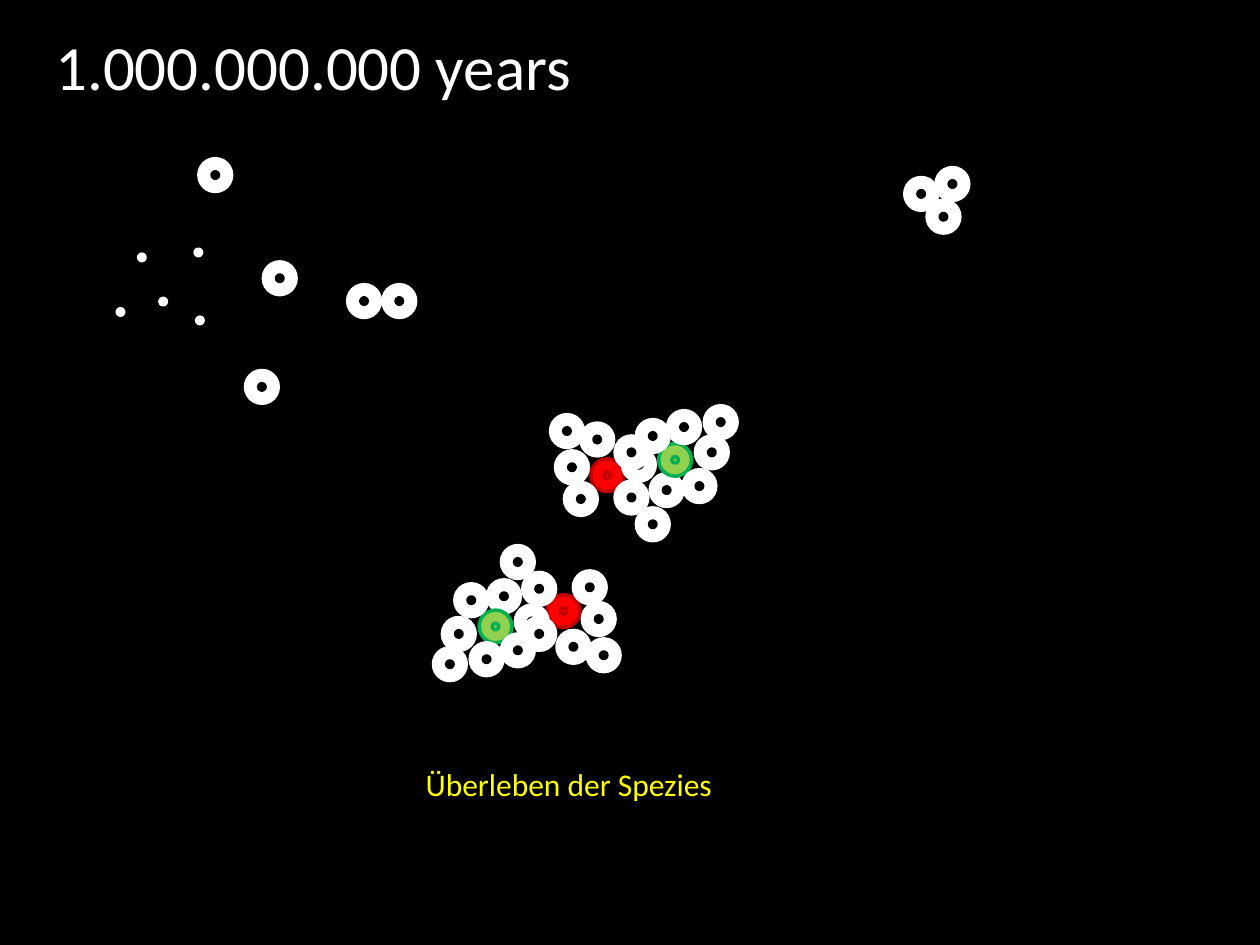
from pptx import Presentation
from pptx.dml.color import RGBColor
from pptx.enum.shapes import MSO_SHAPE
from pptx.enum.text import MSO_ANCHOR, MSO_AUTO_SIZE, PP_ALIGN
from pptx.util import Cm, Pt

BLACK = RGBColor(0x00, 0x00, 0x00)
WHITE = RGBColor(0xFF, 0xFF, 0xFF)
RED = RGBColor(0xFF, 0x00, 0x00)
DARK_RED = RGBColor(0xC0, 0x00, 0x00)
LIME = RGBColor(0x92, 0xD0, 0x50)
GREEN = RGBColor(0x00, 0xB0, 0x50)
YELLOW = RGBColor(0xFF, 0xFF, 0x00)

CELL_SIZE = 0.66
NUCLEUS_SIZE = 0.13

PLAIN = ((WHITE, WHITE), (BLACK, BLACK))
RED_CELL = ((RED, DARK_RED), (RED, DARK_RED))
GREEN_CELL = ((LIME, GREEN), (LIME, GREEN))

MOLECULES = [(3.29, 6.08), (4.0, 5.09), (2.43, 6.29), (2.86, 5.19), (4.03, 6.46)]
SINGLE_CELLS = [(5.64, 5.61), (7.34, 6.07), (4.34, 3.53), (5.28, 7.8), (8.05, 6.07)]
CELL_TRIO = [(18.57, 3.91), (19.02, 4.37), (19.2, 3.71)]
ORGANISM = [
    (12.24, 9.58, RED_CELL),
    (12.73, 10.03, PLAIN),
    (12.88, 9.37, PLAIN),
    (13.44, 9.88, PLAIN),
    (13.16, 10.57, PLAIN),
    (13.61, 9.27, GREEN_CELL),
    (13.16, 8.79, PLAIN),
    (13.79, 8.61, PLAIN),
    (14.35, 9.12, PLAIN),
    (14.1, 9.8, PLAIN),
    (14.53, 8.51, PLAIN),
    (11.71, 10.06, PLAIN),
    (11.53, 9.42, PLAIN),
    (12.04, 8.86, PLAIN),
    (12.73, 9.12, PLAIN),
    (11.43, 8.69, PLAIN),
]
MIRROR_X, MIRROR_Y = 11.8, 10.95


def paint(shape, fill, line):
    shape.fill.solid()
    shape.fill.fore_color.rgb = fill
    shape.line.color.rgb = line
    shape.line.width = Pt(2)


def add_disc(shapes, x, y, size, fill, line):
    disc = shapes.add_shape(
        MSO_SHAPE.OVAL, Cm(x - size / 2), Cm(y - size / 2), Cm(size), Cm(size)
    )
    disc.shadow.inherit = False
    paint(disc, fill, line)


def add_cell(shapes, x, y, colours=PLAIN):
    body, nucleus = colours
    add_disc(shapes, x, y, CELL_SIZE, *body)
    add_disc(shapes, x, y, NUCLEUS_SIZE, *nucleus)


def add_cell_group(page, cells):
    group = page.shapes.add_group_shape()
    for cell in cells:
        add_cell(group.shapes, *cell)


def write_text(box, text, size, colour, anchor=MSO_ANCHOR.TOP, font="Calibri"):
    frame = box.text_frame
    frame.vertical_anchor = anchor
    para = frame.paragraphs[0]
    para.alignment = PP_ALIGN.LEFT
    span = para.add_run()
    span.text = text
    span.font.name = font
    span.font.size = Pt(size)
    span.font.color.rgb = colour


def add_title(page, text):
    title = page.shapes.title
    title.left, title.top, title.width, title.height = Cm(0.86), Cm(0.76), Cm(11.71), Cm(1.12)
    paint(title, BLACK, BLACK)
    title.text_frame.auto_size = MSO_AUTO_SIZE.NONE
    write_text(title, text, size=36, colour=WHITE, anchor=MSO_ANCHOR.MIDDLE)


def add_caption(page, text):
    caption = page.shapes.add_textbox(Cm(8.33), Cm(15.29), Cm(6.35), Cm(1.02))
    caption.text_frame.word_wrap = False
    caption.text_frame.auto_size = MSO_AUTO_SIZE.SHAPE_TO_FIT_TEXT
    write_text(caption, text, size=18, colour=YELLOW)


def main():
    deck = Presentation()
    deck.slide_width, deck.slide_height = Cm(25.4), Cm(19.05)
    page = deck.slides.add_slide(deck.slide_layouts[5])
    page.background.fill.solid()
    page.background.fill.fore_color.rgb = BLACK

    soup = page.shapes.add_group_shape()
    for x, y in MOLECULES:
        add_disc(soup.shapes, x, y, NUCLEUS_SIZE, WHITE, WHITE)
    for x, y in SINGLE_CELLS:
        add_cell(soup.shapes, x, y)

    add_cell_group(page, CELL_TRIO)
    add_cell_group(page, ORGANISM)
    offspring = [(2 * MIRROR_X - x, 2 * MIRROR_Y - y, colours) for x, y, colours in ORGANISM]
    add_cell_group(page, offspring)

    add_title(page, "1.000.000.000 years")
    add_caption(page, "Überleben der Spezies")
    deck.save("out.pptx")


if __name__ == "__main__":
    main()
